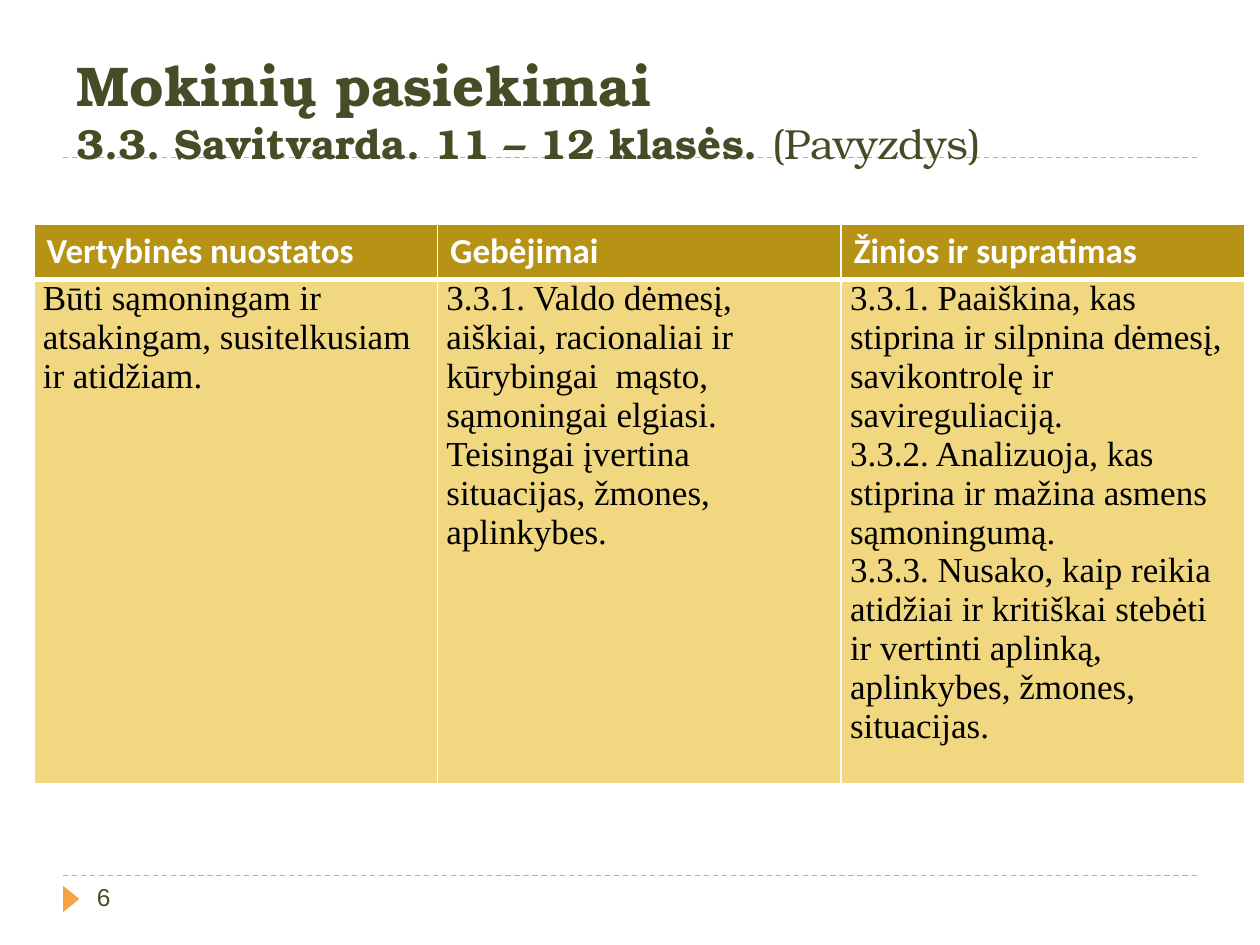
import pptx
import pptx.dml.color
import pptx.enum.dml
import pptx.enum.shapes
import pptx.enum.text
import pptx.oxml
import pptx.oxml.ns
import pptx.util
from dataclasses import dataclass

Inches = pptx.util.Inches
Pt = pptx.util.Pt


@dataclass(frozen=True)
class Theme:
    """Colours, fonts and type sizes of the slide."""
    accent: str = "F3A447"
    title: str = "444D26"
    head_fill: str = "B79315"
    body_fill: str = "F1D77F"
    white: str = "FFFFFF"
    black: str = "000000"
    title_font: str = "TeX Gyre Bonum"
    head_font: str = "Calibri"
    body_font: str = "Times New Roman"
    number_font: str = "Arial"
    title_size: int = 32
    subtitle_size: int = 24
    table_size: int = 20
    number_size: int = 14


THEME = Theme()
HEADERS = ["Vertybinės nuostatos", "Gebėjimai", "Žinios ir supratimas"]
BODY = [
    ["Būti sąmoningam ir atsakingam, susitelkusiam ir atidžiam."],
    ["3.3.1. Valdo dėmesį, aiškiai, racionaliai ir kūrybingai  mąsto, sąmoningai elgiasi.",
     "Teisingai įvertina situacijas, žmones, aplinkybes."],
    ["3.3.1. Paaiškina, kas stiprina ir silpnina dėmesį, savikontrolę ir savireguliaciją.",
     "3.3.2. Analizuoja, kas stiprina ir mažina asmens sąmoningumą.",
     "3.3.3. Nusako, kaip reikia atidžiai ir kritiškai stebėti ir vertinti aplinką, "
     "aplinkybes, žmones, situacijas."],
]


def rgb(value):
    """Return the colour for a hex value."""
    return pptx.dml.color.RGBColor.from_string(value)


def style_run(r, font, size, color, bold=False):
    """Format one run."""
    r.font.name = font
    r.font.size = Pt(size)
    r.font.color.rgb = rgb(color)
    r.font.bold = bold


def add_rule(s, left, top, width):
    """Draw a dashed horizontal rule."""
    line = s.shapes.add_connector(
        pptx.enum.shapes.MSO_CONNECTOR.STRAIGHT,
        Inches(left), Inches(top), Inches(left + width), Inches(top))
    line.line.color.rgb = rgb(THEME.accent)
    line.line.width = Pt(0.75)
    line.line.dash_style = pptx.enum.dml.MSO_LINE.DASH
    line._element.spPr.append(pptx.oxml.parse_xml(
        f"<a:effectLst {pptx.oxml.ns.nsdecls('a')}/>"))


def add_title(s, left, top, width, height):
    """Place the two-line title, anchored at the bottom."""
    tf = s.shapes.add_textbox(
        Inches(left), Inches(top), Inches(width), Inches(height)).text_frame
    tf.word_wrap = True
    tf.vertical_anchor = pptx.enum.text.MSO_ANCHOR.BOTTOM
    p = tf.paragraphs[0]
    p.text = "Mokinių pasiekimai\v3.3. Savitvarda. 11 – 12 klasės. "
    p.add_run().text = "(Pavyzdys)"
    sizes = [THEME.title_size, THEME.subtitle_size, THEME.subtitle_size]
    for r, size, bold in zip(p.runs, sizes, [True, True, False]):
        style_run(r, THEME.title_font, size, THEME.title, bold)


def set_borders(cell, top, bottom):
    """Give a cell white borders, with its own top and bottom widths."""
    widths = {"lnL": 1, "lnR": 1, "lnT": top, "lnB": bottom}
    tc_pr = cell._tc.get_or_add_tcPr()
    for i, (tag, width) in enumerate(widths.items()):
        tc_pr.insert(i, pptx.oxml.parse_xml(
            f"<a:{tag} {pptx.oxml.ns.nsdecls('a')} w=\"{Pt(width)}\"><a:solidFill>"
            f"<a:srgbClr val=\"{THEME.white}\"/></a:solidFill></a:{tag}>"))


def fill_cell(cell, lines, fill, font, color, bold, margins, borders):
    """Write and format one table cell."""
    cell.fill.solid()
    cell.fill.fore_color.rgb = rgb(fill)
    cell.margin_left = cell.margin_right = Inches(margins[0])
    cell.margin_top = cell.margin_bottom = Inches(margins[1])
    cell.text_frame.text = "\n".join(lines)
    for p in cell.text_frame.paragraphs:
        for r in p.runs:
            style_run(r, font, THEME.table_size, color, bold)
    set_borders(cell, *borders)


def add_achievements(s, left, top, width, height, head_height=0.44):
    """Place the table of attitudes, abilities and knowledge."""
    table = s.shapes.add_table(
        2, len(HEADERS), Inches(left), Inches(top), Inches(width), Inches(height)).table
    table.rows[0].height = Inches(head_height)
    table.rows[1].height = Inches(height - head_height)
    for i, (header, lines) in enumerate(zip(HEADERS, BODY)):
        fill_cell(table.cell(0, i), [header], THEME.head_fill, THEME.head_font,
                  THEME.white, True, (0.1, 0.05), (1, 3))
        fill_cell(table.cell(1, i), lines, THEME.body_fill, THEME.body_font,
                  THEME.black, False, (0.07, 0), (3, 1))


def add_footer(s, left, top, width):
    """Place the bottom rule, the marker and the slide number."""
    add_rule(s, left, top, width)
    sp = s.shapes.add_shape(
        pptx.enum.shapes.MSO_SHAPE.ISOSCELES_TRIANGLE,
        Inches(left - 0.04), Inches(top + 0.12), Inches(0.21), Inches(0.13))
    sp.rotation = 90
    sp.shadow.inherit = False
    sp.fill.solid()
    sp.fill.fore_color.rgb = rgb(THEME.accent)
    sp.line.fill.background()
    tf = s.shapes.add_textbox(
        Inches(left + 0.17), Inches(top), Inches(2.17), Inches(0.4)).text_frame
    tf.word_wrap = True
    tf.text = "6"
    style_run(tf.paragraphs[0].runs[0], THEME.number_font, THEME.number_size, THEME.title)


def main():
    """Build and save the slide."""
    prs = pptx.Presentation()
    prs.slide_width, prs.slide_height = Inches(10), Inches(7.5)
    s = prs.slides.add_slide(prs.slide_layouts[6])
    add_footer(s, 0.5, 6.95, 9)
    add_rule(s, 0.5, 1.25, 9)
    add_title(s, 0.51, 0.28, 8.99, 1.1)
    add_achievements(s, 0.27, 1.78, 9.61, 4.44)
    prs.save("out.pptx")


if __name__ == "__main__":
    main()
